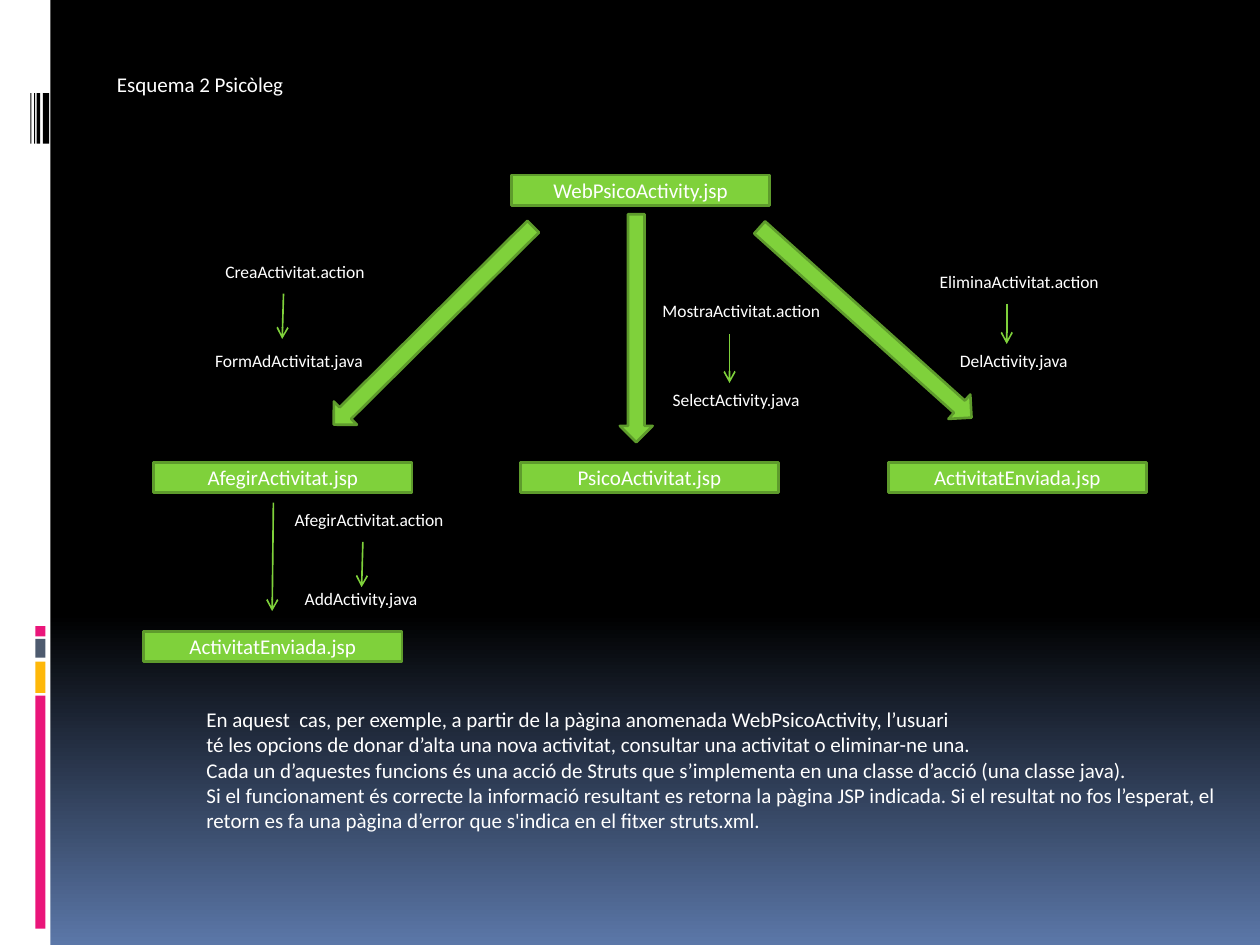
"""Build the flow diagram slide of the psychologist's activity pages."""
from lxml import etree
from pptx import Presentation
from pptx.dml.color import RGBColor
from pptx.enum.shapes import MSO_CONNECTOR, MSO_SHAPE
from pptx.enum.text import MSO_ANCHOR, MSO_AUTO_SIZE, PP_ALIGN
from pptx.oxml.ns import qn
from pptx.util import Inches, Pt

RECT, DOWN = MSO_SHAPE.RECTANGLE, MSO_SHAPE.DOWN_ARROW
LINE = MSO_CONNECTOR.STRAIGHT
MIDDLE, TOP = MSO_ANCHOR.MIDDLE, MSO_ANCHOR.TOP
GROW, FIXED = MSO_AUTO_SIZE.SHAPE_TO_FIT_TEXT, MSO_AUTO_SIZE.NONE
LEFT, CENTER = PP_ALIGN.LEFT, PP_ALIGN.CENTER
WHITE, BLACK, GREEN, EDGE = "FFFFFF", "000000", "7FD13B", "5E9B2C"
PINK, GOLD, SLATE, BLUE = "EA157A", "FEB80A", "4E5B6F", "5B77A8"
color = RGBColor.from_string

deck = Presentation()
deck.slide_width, deck.slide_height = Inches(10), Inches(7.5)
slide = deck.slides.add_slide(deck.slide_layouts[6])
shapes = slide.shapes

back = slide.background.fill
back.gradient()
back.gradient_angle = 270
for stop, (place, tint) in zip(back.gradient_stops, [(0.65, BLACK), (1, BLUE)]):
    stop.position = place
    stop.color.rgb = color(tint)


def draw(kind, box, fill, edge=None):
    shape = shapes.add_shape(kind, *map(Inches, box))
    shape.shadow.inherit = False
    shape.fill.solid()
    shape.fill.fore_color.rgb = color(fill)
    if edge:
        shape.line.color.rgb = color(edge)
        shape.line.width = Pt(1.5)
    else:
        shape.line.fill.background()
    return shape


def write(shape, lines, size, align, form):
    frame = shape.text_frame
    for name, value in form.items():
        setattr(frame, name, value)
    frame.text = "\n".join(lines)
    for para in frame.paragraphs:
        para.alignment = align
        font = para.runs[0].font
        for name, value in {"name": "Calibri", "size": Pt(size)}.items():
            setattr(font, name, value)
        font.color.rgb = color(WHITE)


draw(RECT, (0, 0, 0.4, 7.5), WHITE)
for left, width in [(0.34, 0.05), (0.29, 0.03), (0.27, 0.01), (0.24, 0.01)]:
    draw(RECT, (left, 0.74, width, 0.4), BLACK)
for top, height, fill in [(5.52, 1.85, PINK), (5.25, 0.25, GOLD),
                          (5.07, 0.15, SLATE), (4.97, 0.08, PINK)]:
    draw(RECT, (0.28, top, 0.08, height), fill)

for left, top, height, turn in [(3.31, 1.47, 2.23, 45.2), (4.92, 1.7, 1.81, 0),
                                (6.74, 1.43, 2.26, 311.9)]:
    draw(DOWN, (left, top, 0.26, height), GREEN, EDGE).rotation = turn

page = {"word_wrap": True, "vertical_anchor": MIDDLE, "auto_size": FIXED}
for text, left, top in [
    ("WebPsicoActivity.jsp", 4.06, 1.39),
    ("AfegirActivitat.jsp", 1.22, 3.67),
    ("PsicoActivitat.jsp", 4.13, 3.67),
    ("ActivitatEnviada.jsp", 7.05, 3.67),
    ("ActivitatEnviada.jsp", 1.14, 5.01),
]:
    write(draw(RECT, (left, top, 2.05, 0.24), GREEN, EDGE), [text], 12, CENTER, page)

for x, top, end, low in [(2.25, 2.33, 2.24, 2.69), (2.17, 3.99, 2.16, 4.85),
                         (5.79, 2.65, 5.79, 3.04), (7.99, 2.41, 7.99, 2.73),
                         (2.88, 4.3, 2.87, 4.66)]:
    arrow = shapes.add_connector(LINE, *map(Inches, (x, top, end, low)))
    arrow.line.color.rgb = color(GREEN)
    arrow.line.width = Pt(0.94)
    etree.SubElement(arrow.line._get_or_add_ln(), qn("a:tailEnd"), type="arrow")
    etree.SubElement(arrow._element.spPr, qn("a:effectLst"))

story = [
    "En aquest  cas, per exemple, a partir de la pàgina anomenada WebPsicoActivity, l’usuari",
    "té les opcions de donar d’alta una nova activitat, consultar una activitat o eliminar-ne una.",
    "Cada un d’aquestes funcions és una acció de Struts que s’implementa en una classe d’acció (una classe java).",
    "Si el funcionament és correcte la informació resultant es retorna la pàgina JSP indicada. "
    "Si el resultat no fos l’esperat, el",
    "retorn es fa una pàgina d’error que s'indica en el fitxer struts.xml.",
]
label = {"vertical_anchor": TOP, "auto_size": GROW}
for lines, size, box, wrap in [
    (["Esquema 2 Psicòleg"], 12, (0.83, 0.52, 1.58, 0.3), False),
    (["CreaActivitat.action"], 10, (1.69, 2.02, 1.42, 0.27), True),
    (["FormAdActivitat.java"], 10, (1.61, 2.73, 1.4, 0.27), False),
    (["MostraActivitat.action"], 10, (5.16, 2.33, 1.47, 0.27), False),
    (["SelectActivity.java"], 10, (5.24, 3.04, 1.23, 0.27), False),
    (["EliminaActivitat.action"], 10, (7.36, 2.1, 1.48, 0.27), False),
    (["DelActivity.java"], 10, (7.52, 2.73, 1.08, 0.27), False),
    (["AfegirActivitat.action"], 10, (2.24, 3.99, 1.57, 0.27), True),
    (["AddActivity.java"], 10, (2.32, 4.62, 1.42, 0.27), True),
    (story, 12, (1.54, 5.56, 8.33, 1.11), False),
]:
    note = shapes.add_textbox(*map(Inches, box))
    write(note, lines, size, LEFT, {**label, "word_wrap": wrap})

deck.save("out.pptx")
